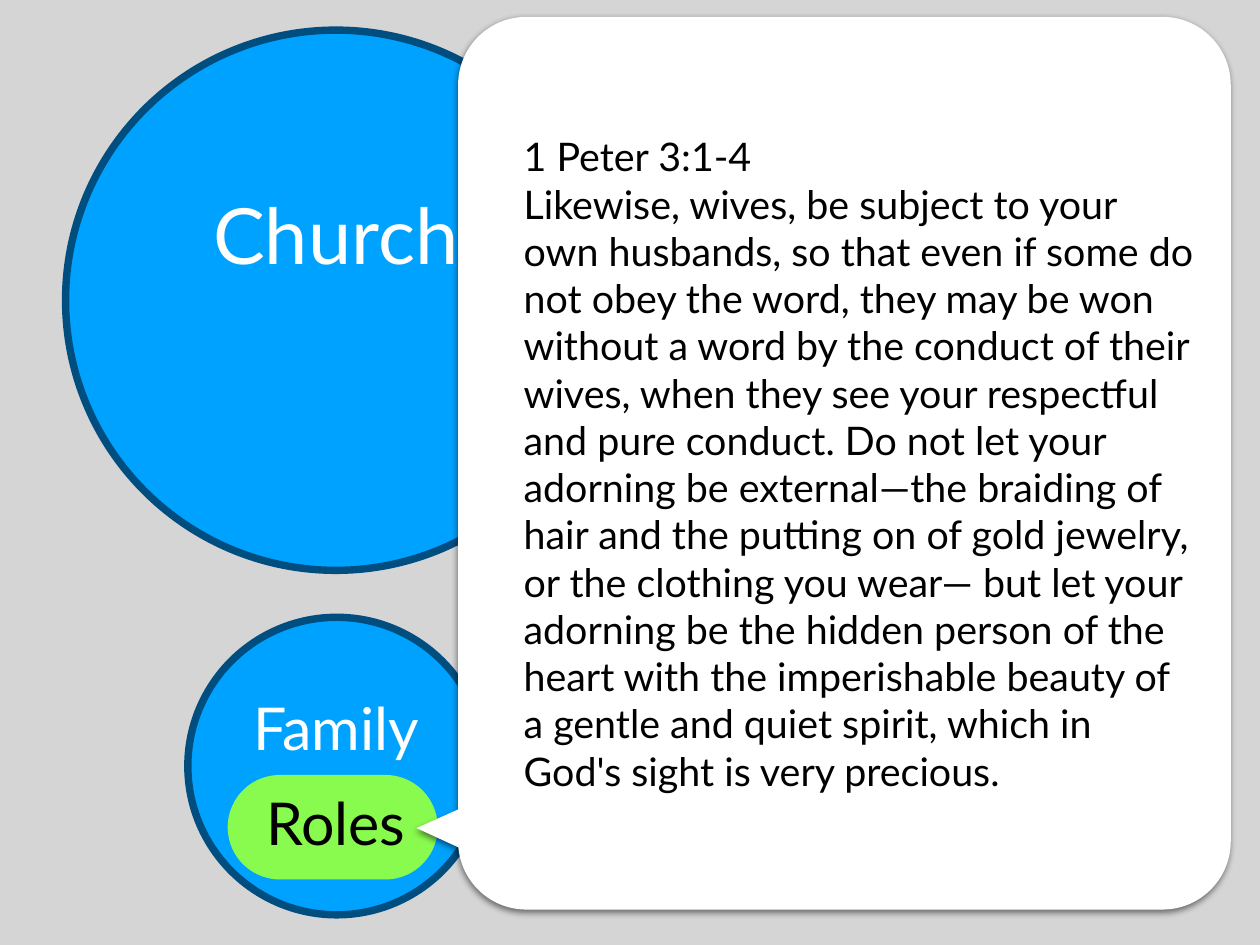
from math import cos, radians, sin

from lxml.etree import SubElement
from pptx import Presentation
from pptx.dml.color import RGBColor
from pptx.enum.shapes import MSO_SHAPE
from pptx.enum.text import MSO_ANCHOR, MSO_AUTO_SIZE, PP_ALIGN
from pptx.oxml.ns import qn
from pptx.util import Inches, Pt

GREY = RGBColor(0xD5, 0xD5, 0xD5)
BLUE = RGBColor(0x00, 0xA2, 0xFF)
NAVY = RGBColor(0x00, 0x4D, 0x80)
GREEN = RGBColor(0x89, 0xFA, 0x4E)
WHITE = RGBColor(0xFF, 0xFF, 0xFF)
BLACK = RGBColor(0x00, 0x00, 0x00)
FONT = "Lato"

REFERENCE = "1 Peter 3:1-4"
VERSES = (
    "Likewise, wives, be subject to your own husbands, so that even if some do "
    "not obey the word, they may be won without a word by the conduct of their "
    "wives, when they see your respectful and pure conduct. Do not let your "
    "adorning be external—the braiding of hair and the putting on of gold "
    "jewelry, or the clothing you wear— but let your adorning be the hidden "
    "person of the heart with the imperishable beauty of a gentle and quiet "
    "spirit, which in God's sight is very precious."
)


def add_text(shapes, box, paragraphs, size, color, align, wrap=False):
    """Add a vertically centred text box with one run per paragraph."""
    text_box = shapes.add_textbox(*map(Inches, box))
    frame = text_box.text_frame
    frame.word_wrap = wrap
    frame.auto_size = MSO_AUTO_SIZE.NONE if wrap else MSO_AUTO_SIZE.SHAPE_TO_FIT_TEXT
    frame.vertical_anchor = MSO_ANCHOR.MIDDLE
    frame.margin_left = frame.margin_right = Inches(0.06)
    frame.margin_top = frame.margin_bottom = Inches(0.06)
    for index, text in enumerate(paragraphs):
        paragraph = frame.add_paragraph() if index else frame.paragraphs[0]
        paragraph.alignment = align
        run = paragraph.add_run()
        run.text = text
        run.font.name = FONT
        run.font.size = Pt(size)
        run.font.color.rgb = color


def add_circle(shapes, left, top, diameter):
    """Add a blue circle with a navy rim."""
    circle = shapes.add_shape(
        MSO_SHAPE.OVAL, *map(Inches, (left, top, diameter, diameter))
    )
    circle.shadow.inherit = False
    circle.fill.solid()
    circle.fill.fore_color.rgb = BLUE
    circle.line.color.rgb = NAVY
    circle.line.width = Pt(6)


def add_roles_pill(slide, left, top, width, height):
    """Add the green pill with its label."""
    shapes = slide.shapes.add_group_shape().shapes
    pill = shapes.add_shape(
        MSO_SHAPE.ROUNDED_RECTANGLE, *map(Inches, (left, top, width, height))
    )
    pill.adjustments[0] = 0.5
    pill.shadow.inherit = False
    pill.fill.solid()
    pill.fill.fore_color.rgb = GREEN
    pill.line.fill.background()
    label_box = (left + 0.32, top + 0.03, 1.8, 1.01)
    add_text(shapes, label_box, ["Roles"], 48, BLACK, PP_ALIGN.CENTER)


def bubble_outline(left, top, width, height, radius):
    """Return the points of a rounded box with a tail low on its left side."""
    right, bottom = left + width, top + height
    corners = [
        (left + radius, top + radius, 180, 270),
        (right - radius, top + radius, 270, 360),
        (right - radius, bottom - radius, 0, 90),
        (left + radius, bottom - radius, 90, 175),
    ]
    steps = 24
    points = []
    for center_x, center_y, start, end in corners:
        for step in range(steps + 1):
            angle = radians(start + (end - start) * step / steps)
            points.append(
                (center_x + radius * cos(angle), center_y + radius * sin(angle))
            )
    tail_y = bottom - 0.92
    return points + [(left - 0.47, tail_y), (left, tail_y - 0.21)]


def add_soft_shadow(shape):
    """Give a shape a small half-transparent shadow below it."""
    shape.shadow.inherit = False
    effects = shape._element.spPr.find(qn("a:effectLst"))
    shadow = SubElement(
        effects, qn("a:outerShdw"),
        blurRad=str(Pt(5)), dist=str(Pt(2)), dir="5400000", rotWithShape="0",
    )
    color = SubElement(shadow, qn("a:srgbClr"), val=str(BLACK))
    SubElement(color, qn("a:alpha"), val="50000")


def add_verse_bubble(slide, left, top, width, height):
    """Add the white speech bubble with the Bible passage."""
    shapes = slide.shapes.add_group_shape().shapes
    outline = [
        (Inches(x), Inches(y))
        for x, y in bubble_outline(left, top, width, height, 0.77)
    ]
    builder = shapes.build_freeform(*outline[0])
    builder.add_line_segments(outline[1:], close=True)
    bubble = builder.convert_to_shape()
    bubble.fill.solid()
    bubble.fill.fore_color.rgb = WHITE
    bubble.line.fill.background()
    add_soft_shadow(bubble)
    passage_box = (left + 0.68, top - 0.08, 7.7, height + 0.16)
    add_text(
        shapes, passage_box, [REFERENCE, VERSES], 32, BLACK, PP_ALIGN.LEFT, wrap=True
    )


def main():
    """Build and save the slide."""
    deck = Presentation()
    deck.slide_width, deck.slide_height = Inches(14.22), Inches(10.67)
    slide = deck.slides.add_slide(deck.slide_layouts[6])
    slide.background.fill.solid()
    slide.background.fill.fore_color.rgb = GREY

    add_circle(slide.shapes, 0.74, 0.34, 6.1)
    add_circle(slide.shapes, 2.12, 6.97, 3.36)
    for label, box, size in [
        ("Church", (2.26, 1.99, 3.06, 1.29), 63),
        ("Family", (2.73, 7.7, 2.13, 1.01), 48),
    ]:
        add_text(slide.shapes, box, [label], size, WHITE, PP_ALIGN.CENTER)
    add_roles_pill(slide, 2.57, 8.75, 2.37, 1.18)
    add_verse_bubble(slide, 5.17, 0.19, 8.72, 10.08)
    deck.save("out.pptx")


if __name__ == "__main__":
    main()
